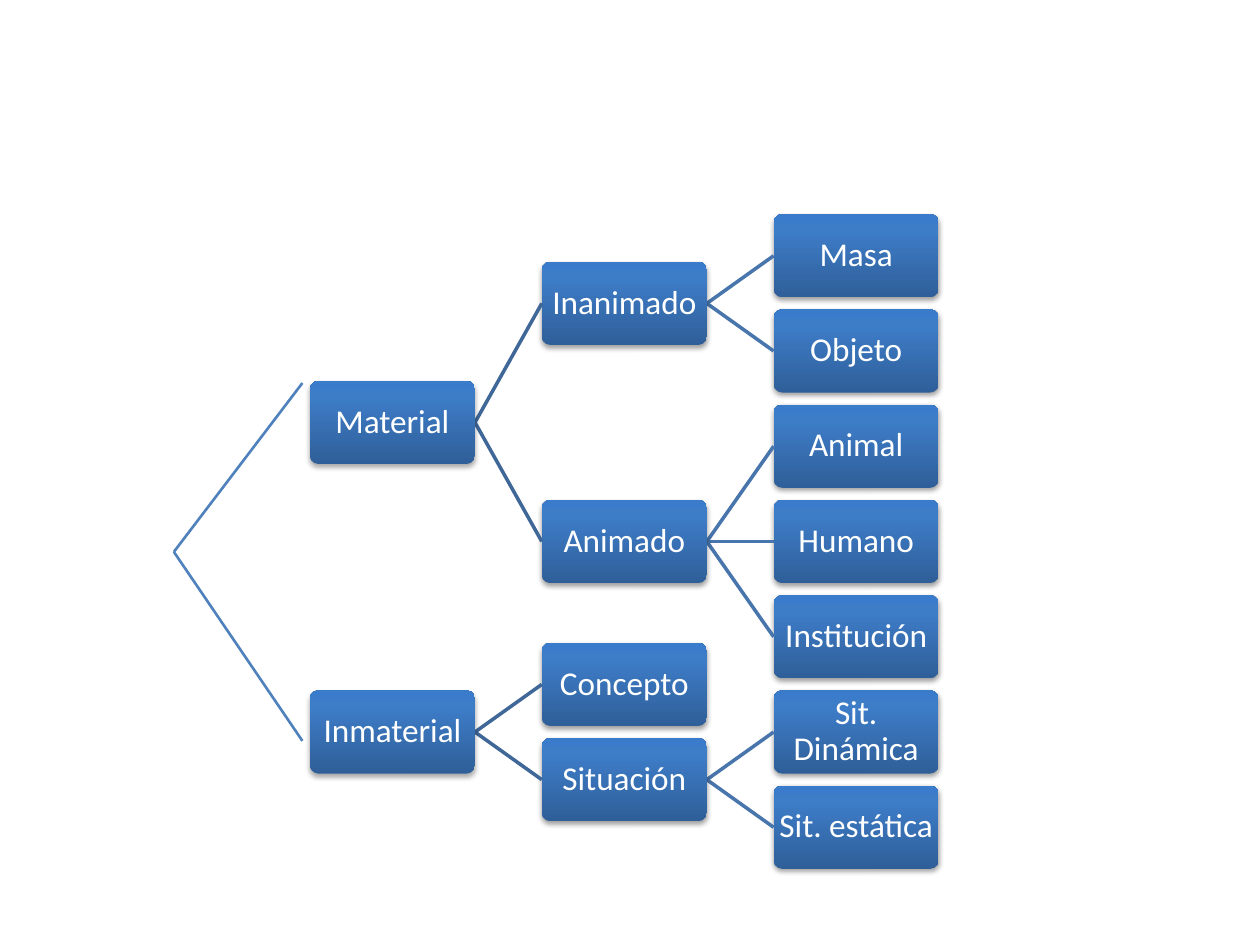
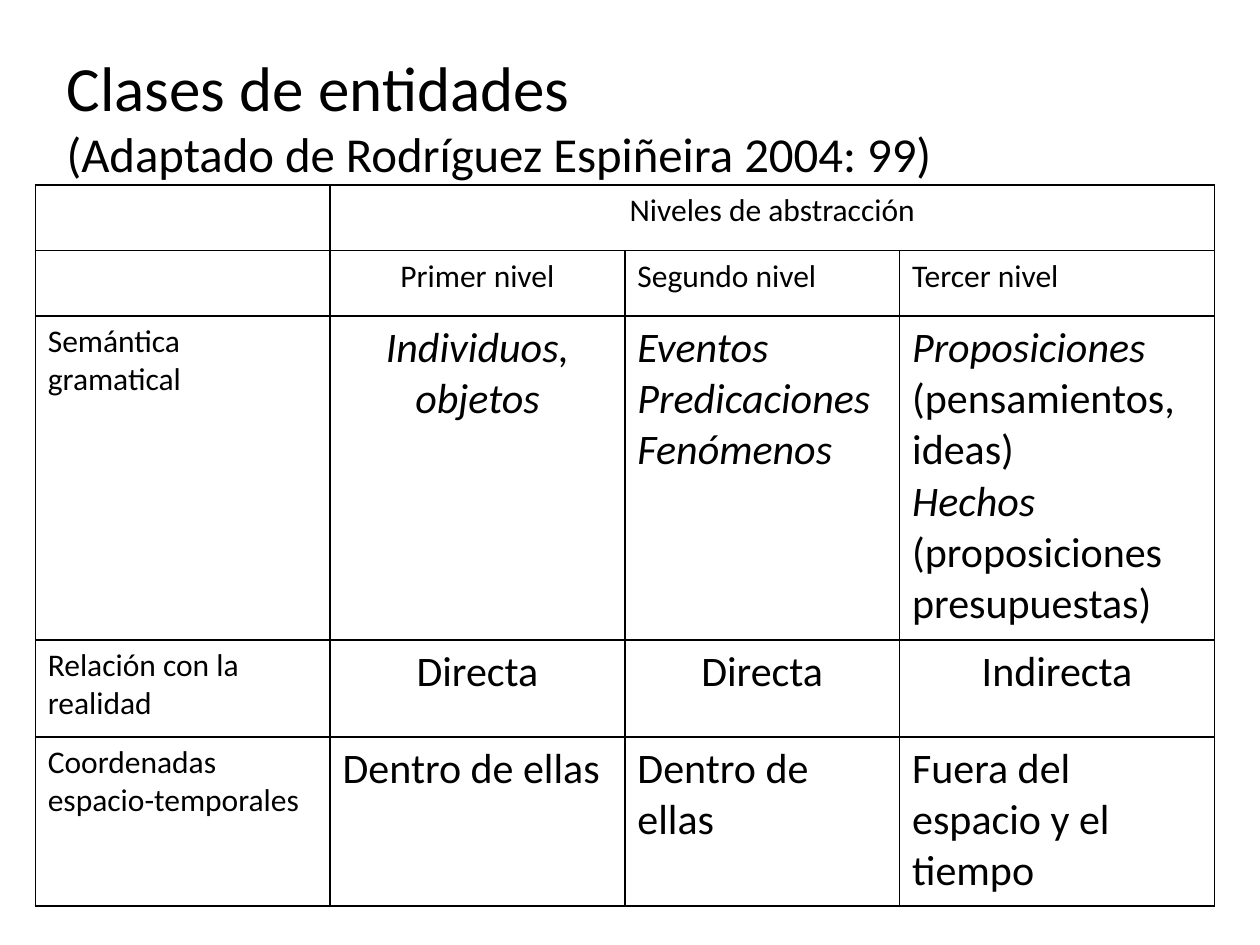
from copy import deepcopy
from dataclasses import dataclass

from lxml.etree import SubElement
from pptx import Presentation
from pptx.dml.color import RGBColor
from pptx.enum.shapes import MSO_CONNECTOR, MSO_SHAPE
from pptx.enum.text import MSO_ANCHOR, PP_ALIGN
from pptx.oxml.ns import qn
from pptx.util import Inches, Pt


@dataclass(frozen=True)
class Theme:
    font: str = "Calibri"
    text: str = "000000"
    node_text: str = "FFFFFF"
    node_stops: tuple = ((0, "2F5F99"), (0.8, "3D7CC7"), (1, "3A7CCB"))
    root_line: str = "4F81BD"
    branch_lines: tuple = ("3F6797", "4875AC")
    title_size: float = 36
    subtitle_size: float = 27.9
    node_size: float = 19
    label_size: float = 18
    body_size: float = 24


# A node is (name, children); a leaf is (name, row).
ENTITY_TREE = [
    ("Material", [
        ("Inanimado", [("Masa", 0), ("Objeto", 1)]),
        ("Animado", [("Animal", 2), ("Humano", 3), ("Institución", 4)]),
    ]),
    ("Inmaterial", [
        ("Concepto", 4.5),
        ("Situación", [("Sit. Dinámica", 5), ("Sit. estática", 6)]),
    ]),
]
TREE_LEFT, TREE_TOP = 2.46, 1.7
NODE_WIDTH, NODE_HEIGHT = 1.31, 0.66
LEVEL_STEP, ROW_STEP = 1.84, 0.756

# Asterisks enclose italics; a new line starts a new paragraph.
ABSTRACTION_LEVELS = [
    ["", "Niveles de abstracción", "", ""],
    ["", "Primer nivel", "Segundo nivel", "Tercer nivel"],
    ["Semántica gramatical", "*Individuos, objetos*",
     "*Eventos*\n*Predicaciones*\n*Fenómenos*",
     "*Proposiciones *(pensamientos, ideas)\n"
     "*Hechos *(proposiciones presupuestas)"],
    ["Relación con la realidad", "Directa", "Directa", "Indirecta"],
    ["Coordenadas espacio-temporales", "Dentro de ellas", "Dentro de ellas",
     "Fuera del espacio y el tiempo"],
]
COLUMN_WIDTHS = [2.34, 2.34, 2.18, 2.5]
ROW_HEIGHTS = [0.52, 0.52, 2.57, 0.77, 1.34]
HEADER_ROWS = 2
CENTERED_CELLS = {(0, 1), (1, 1), (2, 1), (3, 1), (3, 2), (3, 3)}


class SlideBuilder:
    def __init__(self, presentation, theme):
        self.presentation = presentation
        self.theme = theme
        self.slide = None

    def new_slide(self):
        blank = self.presentation.slide_layouts[6]
        self.slide = self.presentation.slides.add_slide(blank)

    def style_font(self, font, size, color):
        font.name = self.theme.font
        font.size = Pt(size)
        font.color.rgb = RGBColor.from_string(color)

    def title(self, heading, source):
        box = self.slide.shapes.add_textbox(
            Inches(0.43), Inches(0.29), Inches(9), Inches(1.25))
        frame = box.text_frame
        frame.word_wrap = True
        frame.vertical_anchor = MSO_ANCHOR.MIDDLE
        paragraph = frame.paragraphs[0]
        for text, size in ((heading, self.theme.title_size),
                           (source, self.theme.subtitle_size)):
            if paragraph.runs:
                paragraph.add_line_break()
            run = paragraph.add_run()
            run.text = text
            self.style_font(run.font, size, self.theme.text)

    def line(self, start, end, color, width):
        connector = self.slide.shapes.add_connector(
            MSO_CONNECTOR.STRAIGHT, *map(Inches, (*start, *end)))
        connector.line.color.rgb = RGBColor.from_string(color)
        connector.line.width = Pt(width)
        SubElement(connector._element.spPr, qn("a:effectLst"))

    def node(self, name, left, top, level):
        shape = self.slide.shapes.add_shape(
            MSO_SHAPE.ROUNDED_RECTANGLE, Inches(left), Inches(top),
            Inches(NODE_WIDTH), Inches(NODE_HEIGHT))
        shape.adjustments[0] = 0.1
        shape.line.fill.background()
        self.fill_gradient(shape)
        self.drop_shadow(shape, *((35, 1.8) if level == 0 else (38, 1.6)))

        frame = shape.text_frame
        frame.word_wrap = True
        frame.vertical_anchor = MSO_ANCHOR.MIDDLE
        frame.margin_left = frame.margin_right = Inches(0.01)
        frame.margin_top = frame.margin_bottom = Inches(0.01)
        paragraph = frame.paragraphs[0]
        paragraph.text = name
        paragraph.alignment = PP_ALIGN.CENTER
        paragraph.line_spacing = 0.9
        self.style_font(paragraph.font, self.theme.node_size,
                        self.theme.node_text)

    def fill_gradient(self, shape):
        shape.fill.gradient()
        shape.fill.gradient_angle = 90
        stop_list = shape._element.spPr.find(".//" + qn("a:gsLst"))
        stop_list.append(deepcopy(stop_list[-1]))
        stops = shape.fill.gradient_stops
        for stop, (position, color) in zip(stops, self.theme.node_stops):
            stop.position = position
            stop.color.rgb = RGBColor.from_string(color)

    def drop_shadow(self, shape, opacity, distance):
        shape.shadow.inherit = False
        effects = shape._element.spPr.find(qn("a:effectLst"))
        shadow = SubElement(
            effects, qn("a:outerShdw"), blurRad=str(Pt(3.1)),
            dist=str(Pt(distance)), dir="5400000", rotWithShape="0")
        color = SubElement(shadow, qn("a:srgbClr"), val="000000")
        SubElement(color, qn("a:alpha"), val=str(opacity * 1000))

    def branch(self, name, content, level=0):
        """Draw a node with all its descendants and return its row."""
        left = TREE_LEFT + level * LEVEL_STEP
        right = left + NODE_WIDTH
        row, child_rows = content, []
        if isinstance(content, list):
            child_rows = [self.branch(*child, level + 1) for child in content]
            row = (child_rows[0] + child_rows[-1]) / 2

        def middle(at_row):
            return TREE_TOP + at_row * ROW_STEP + NODE_HEIGHT / 2

        for child_row in child_rows:
            self.line((right, middle(row)),
                      (left + LEVEL_STEP, middle(child_row)),
                      self.theme.branch_lines[level], 2)
        self.node(name, left, TREE_TOP + row * ROW_STEP, level)
        return row

    def table(self, rows):
        table = self.slide.shapes.add_table(
            len(rows), len(COLUMN_WIDTHS), Inches(0.28), Inches(1.47),
            Inches(sum(COLUMN_WIDTHS)), Inches(sum(ROW_HEIGHTS))).table
        table.first_row = table.horz_banding = False
        for column, width in zip(table.columns, COLUMN_WIDTHS):
            column.width = Inches(width)
        for row, height in zip(table.rows, ROW_HEIGHTS):
            row.height = Inches(height)
        table.cell(0, 1).merge(table.cell(0, 3))
        for i, texts in enumerate(rows):
            for j, text in enumerate(texts):
                is_label = i < HEADER_ROWS or j == 0
                size = (self.theme.label_size if is_label
                        else self.theme.body_size)
                self.cell(table.cell(i, j), text, size, (i, j) in CENTERED_CELLS)

    def cell(self, cell, text, size, centered):
        properties = cell._tc.get_or_add_tcPr()
        for side in ("a:lnL", "a:lnR", "a:lnT", "a:lnB"):
            border = SubElement(properties, qn(side), w=str(Pt(1)))
            fill = SubElement(border, qn("a:solidFill"))
            SubElement(fill, qn("a:srgbClr"), val=self.theme.text)
        cell.fill.background()

        frame = cell.text_frame
        for k, content in enumerate(text.split("\n")):
            paragraph = frame.add_paragraph() if k else frame.paragraphs[0]
            paragraph.alignment = PP_ALIGN.CENTER if centered else PP_ALIGN.LEFT
            self.style_font(paragraph.font, size, self.theme.text)
            for part, piece in enumerate(content.split("*")):
                if piece:
                    run = paragraph.add_run()
                    run.text = piece
                    run.font.italic = part % 2 == 1


def main():
    presentation = Presentation()
    presentation.slide_width = Inches(10)
    presentation.slide_height = Inches(7.5)
    theme = Theme()
    builder = SlideBuilder(presentation, theme)

    builder.new_slide()
    for name, children in ENTITY_TREE:
        builder.branch(name, children)
    for end in ((2.4, 3.04), (2.4, 5.88)):
        builder.line((1.38, 4.38), end, theme.root_line, 1.5)

    builder.new_slide()
    builder.title("Clases de entidades ",
                  "(Adaptado de Rodríguez Espiñeira 2004: 99)")
    builder.table(ABSTRACTION_LEVELS)

    presentation.save("out.pptx")


if __name__ == "__main__":
    main()
